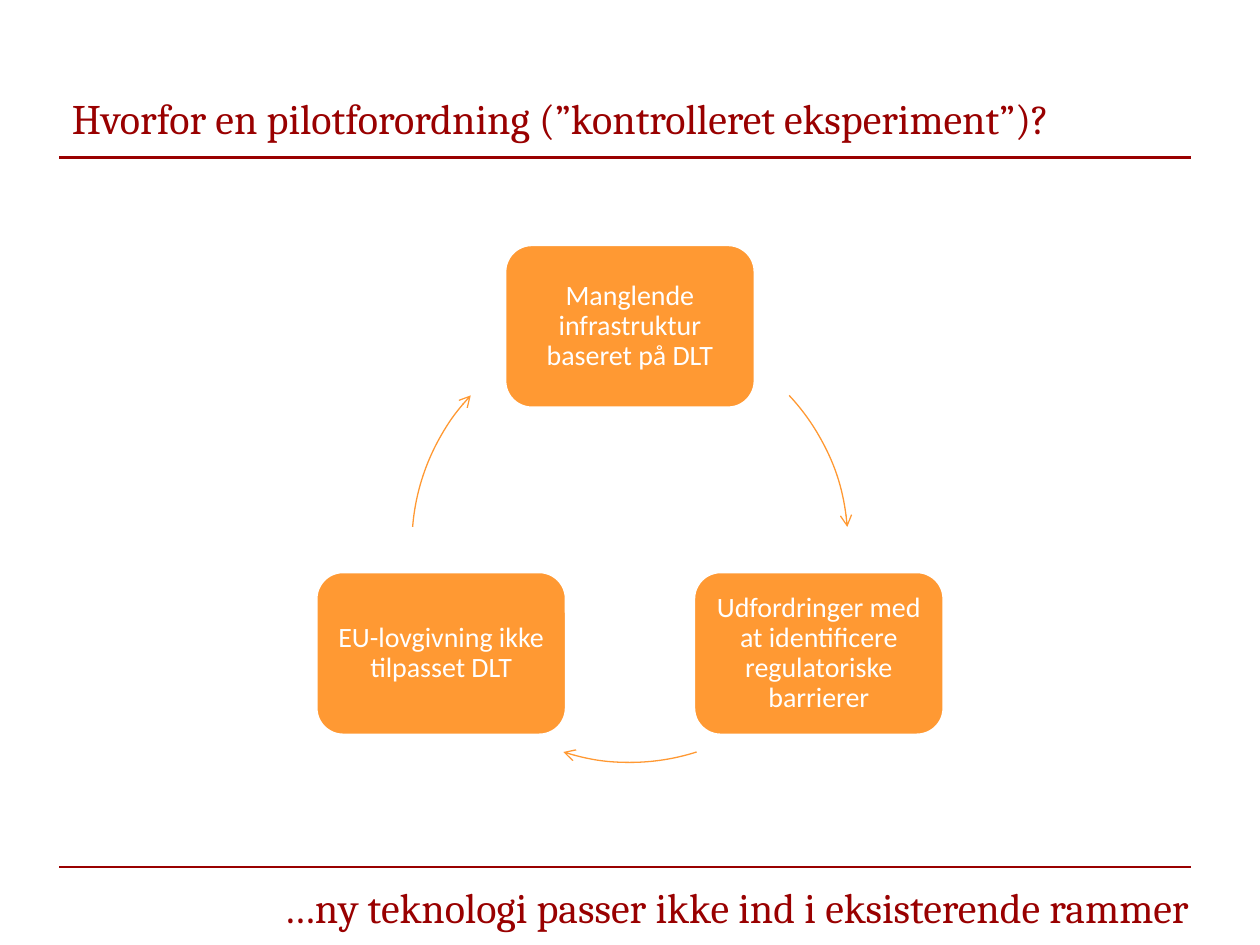
from math import cos, radians, sin

from lxml.etree import SubElement
from pptx import Presentation
from pptx.dml.color import RGBColor
from pptx.enum.shapes import MSO_CONNECTOR, MSO_SHAPE
from pptx.enum.text import MSO_ANCHOR, PP_ALIGN
from pptx.oxml.ns import qn
from pptx.util import Pt

DARK_RED, ORANGE, WHITE = "990000", "FF9933", "FFFFFF"
CENTER_X, CENTER_Y, RADIUS = 360, 311.1, 124.6
BOX_WIDTH, BOX_HEIGHT = 143.3, 93.6

# Angles in degrees, clockwise from three o'clock
STEPS = [
    (-90, "Manglende infrastruktur baseret på DLT"),
    (30, "Udfordringer med at identificere regulatoriske barrierer"),
    (150, "EU-lovgivning ikke tilpasset DLT"),
]
ARROWS = [(316.9, 355.4), (72.2, 107.8), (184.6, 223.1)]


def color(hex_string):
    return RGBColor.from_string(hex_string)


def set_line(line, hex_string, width):
    line.color.rgb = color(hex_string)
    line.width = Pt(width)


def write(frame, text, size, font_name, hex_string, alignment, anchor):
    frame.word_wrap = True
    frame.vertical_anchor = anchor
    paragraph = frame.paragraphs[0]
    paragraph.alignment = alignment
    run = paragraph.add_run()
    run.text = text
    run.font.size = Pt(size)
    run.font.name = font_name
    run.font.color.rgb = color(hex_string)
    return paragraph


def add_heading(slide, text, left, top, width, height, alignment, anchor):
    box = slide.shapes.add_textbox(Pt(left), Pt(top), Pt(width), Pt(height))
    write(box.text_frame, text, 24, "Cambria", DARK_RED, alignment, anchor)


def add_rule(slide, y):
    connector = slide.shapes.add_connector(
        MSO_CONNECTOR.STRAIGHT, Pt(34), Pt(y), Pt(680.4), Pt(y))
    set_line(connector.line, DARK_RED, 1.25)
    SubElement(connector._element.spPr, qn("a:effectLst"))


def add_step(slide, angle, text):
    """Add a rounded box centred on the cycle at the given angle."""
    x = CENTER_X + RADIUS * cos(radians(angle))
    y = CENTER_Y + RADIUS * sin(radians(angle))
    shape = slide.shapes.add_shape(
        MSO_SHAPE.ROUNDED_RECTANGLE, Pt(x - BOX_WIDTH / 2),
        Pt(y - BOX_HEIGHT / 2), Pt(BOX_WIDTH), Pt(BOX_HEIGHT))
    shape.shadow.inherit = False
    shape.fill.solid()
    shape.fill.fore_color.rgb = color(ORANGE)
    set_line(shape.line, WHITE, 2)
    frame = shape.text_frame
    frame.margin_left = frame.margin_right = Pt(5)
    frame.margin_top = frame.margin_bottom = Pt(5)
    paragraph = write(frame, text, 16, "Calibri", WHITE,
                      PP_ALIGN.CENTER, MSO_ANCHOR.MIDDLE)
    paragraph.line_spacing = 0.9


def add_arc_arrow(slide, start, end):
    arc = slide.shapes.add_shape(
        MSO_SHAPE.ARC, Pt(CENTER_X - RADIUS), Pt(CENTER_Y - RADIUS),
        Pt(2 * RADIUS), Pt(2 * RADIUS))
    arc.shadow.inherit = False
    arc.fill.background()
    # Stored angles are 60000ths of a degree; adjustments are scaled by 100000
    arc.adjustments[0] = start * 0.6
    arc.adjustments[1] = end * 0.6
    set_line(arc.line, ORANGE, 0.75)
    SubElement(arc.line._get_or_add_ln(), qn("a:tailEnd"), type="arrow")


def main():
    presentation = Presentation()
    presentation.slide_width, presentation.slide_height = Pt(720), Pt(540)
    slide = presentation.slides.add_slide(presentation.slide_layouts[6])
    for y in (90, 495.4):
        add_rule(slide, y)
    add_heading(slide, "Hvorfor en pilotforordning (”kontrolleret eksperiment”)?",
                34, 42.5, 648, 49.7, PP_ALIGN.LEFT, MSO_ANCHOR.MIDDLE)
    add_heading(slide, "…ny teknologi passer ikke ind i eksisterende rammer",
                34, 500.4, 652.3, 33.8, PP_ALIGN.RIGHT, MSO_ANCHOR.TOP)
    for (angle, text), (start, end) in zip(STEPS, ARROWS):
        add_step(slide, angle, text)
        add_arc_arrow(slide, start, end)
    presentation.save("out.pptx")


if __name__ == "__main__":
    main()
